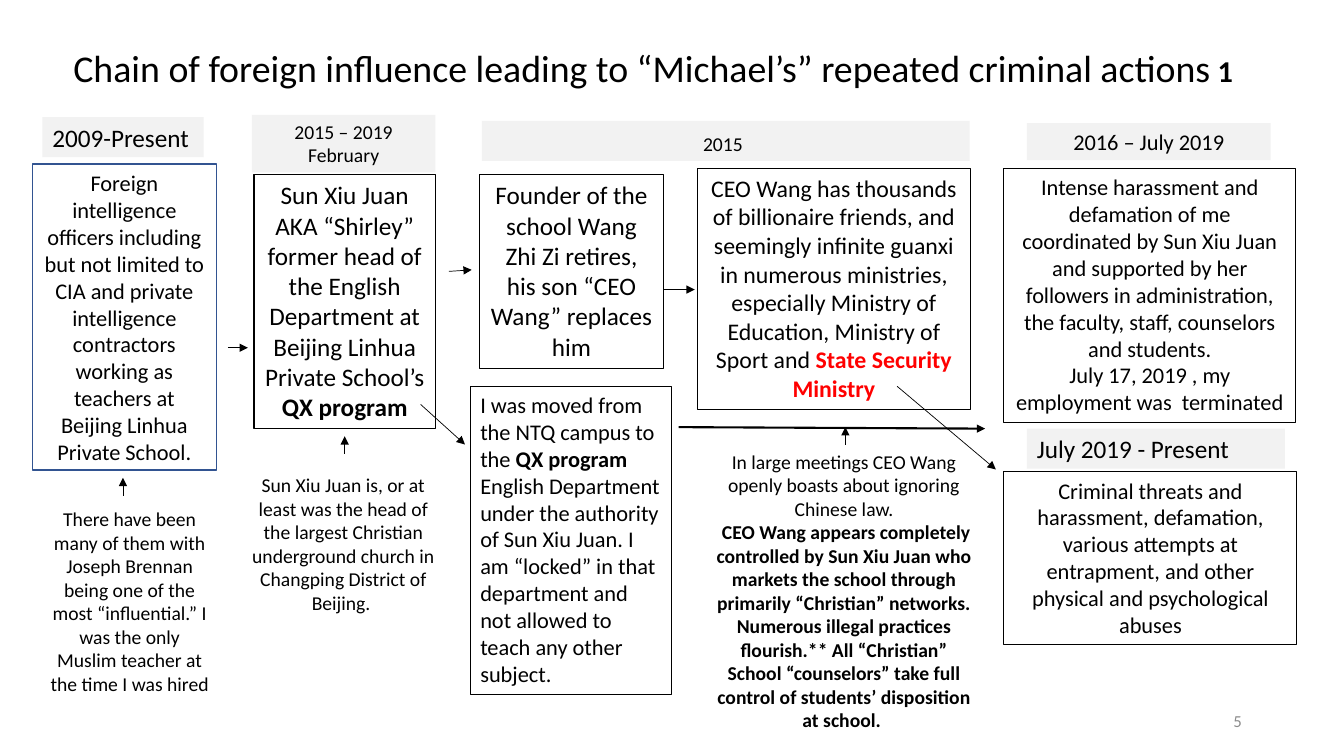
from dataclasses import dataclass

from lxml.etree import SubElement
from pptx import Presentation
from pptx.dml.color import RGBColor
from pptx.enum.shapes import MSO_CONNECTOR, MSO_SHAPE
from pptx.enum.text import MSO_ANCHOR, PP_ALIGN
from pptx.oxml.ns import qn
from pptx.util import Inches, Pt

WIDE, HIGH = Inches(13.33), Inches(7.5)
FONT = "Calibri"
BLACK, WHITE, GREY, RED = "000000", "FFFFFF", "F2F2F2", "FF0000"
BLUE, DIM = "325491", "8C8C8C"
LEFT, MID, RIGHT = PP_ALIGN.LEFT, PP_ALIGN.CENTER, PP_ALIGN.RIGHT
TOP, CORE = MSO_ANCHOR.TOP, MSO_ANCHOR.MIDDLE


@dataclass(frozen=True)
class Run:
    text: str
    bold: bool = False
    color: str = BLACK
    size: float = 0


@dataclass(frozen=True)
class Box:
    area: tuple[float, float, float, float]
    size: float
    paras: list[list[Run]]
    fill: str = ""
    edge: str = ""
    line: float = 0.75
    align: PP_ALIGN = MID
    anchor: MSO_ANCHOR = TOP
    pitch: float = 1


@dataclass(frozen=True)
class Arrow:
    start: tuple[float, float]
    end: tuple[float, float]
    line: float = 0.5


def paint(code: str) -> RGBColor:
    return RGBColor.from_string(code)


def across(share: float) -> int:
    return round(WIDE * share / 100)


def down(share: float) -> int:
    return round(HIGH * share / 100)


def add_box(slide, box: Box) -> None:
    x, y, w, h = box.area
    place = across(x), down(y), across(w), down(h)
    if box.fill or box.edge:
        shape = slide.shapes.add_shape(MSO_SHAPE.RECTANGLE, *place)
        shape.shadow.inherit = False
    else:
        shape = slide.shapes.add_textbox(*place)
    if box.fill:
        shape.fill.solid()
        shape.fill.fore_color.rgb = paint(box.fill)
    else:
        shape.fill.background()
    if box.edge:
        shape.line.color.rgb = paint(box.edge)
        shape.line.width = Pt(box.line)
    else:
        shape.line.fill.background()
    frame = shape.text_frame
    frame.word_wrap = True
    frame.vertical_anchor = box.anchor
    for i, runs in enumerate(box.paras):
        para = frame.add_paragraph() if i else frame.paragraphs[0]
        para.alignment = box.align
        para.line_spacing = box.pitch
        for item in runs:
            run = para.add_run()
            run.text = item.text
            run.font.name = FONT
            run.font.size = Pt(item.size or box.size)
            run.font.bold = item.bold
            run.font.color.rgb = paint(item.color)


def add_arrow(slide, arrow: Arrow) -> None:
    (x1, y1), (x2, y2) = arrow.start, arrow.end
    link = slide.shapes.add_connector(
        MSO_CONNECTOR.STRAIGHT, across(x1), down(y1), across(x2), down(y2))
    link.line.color.rgb = paint(BLACK)
    link.line.width = Pt(arrow.line)
    SubElement(link.line._get_or_add_ln(), qn("a:tailEnd"), type="triangle")
    SubElement(link._element.spPr, qn("a:effectLst"))


TITLE = Box((3.15, 3.7, 91.4, 11.2), 27, [[
    Run("Chain of foreign influence leading to “Michael’s” repeated criminal actions"),
    Run(" 1 ", True, size=21.6)]], anchor=CORE, pitch=0.9)

DATES = [
    Box((3.15, 15.5, 12, 5.3), 18, [[Run("2009-Present")]], GREY, align=LEFT),
    Box((18.75, 15.2, 13.65, 7.6), 14, [[Run("2015 – 2019 February")]], GREY),
    Box((35.85, 16, 36.3, 5.3), 14, [[Run("2015"), Run(" ", size=18)]], GREY),
    Box((76.4, 16.3, 18.15, 4.9), 16, [[Run("2016 – July 2019")]], GREY),
    Box((76.4, 56.7, 19.2, 5.3), 18, [[Run("July 2019 - Present")]], GREY, align=LEFT),
]

EVENTS = [
    Box((2.4, 21.7, 13.7, 40.5), 16, [[
        Run("Foreign intelligence officers including but not limited to CIA and "
            "private intelligence contractors working as teachers at Beijing "
            "Linhua Private School.")]], WHITE, BLUE, 1, anchor=CORE),
    Box((18.9, 23.1, 13.5, 33.6), 18, [[
        Run("Sun Xiu Juan AKA “Shirley” former head of the English Department at "
            "Beijing Linhua Private School’s "),
        Run("QX program", True)]], edge=BLACK),
    Box((35.7, 23.1, 13.65, 25.6), 18, [[
        Run("Founder of the school Wang Zhi Zi retires, his son “CEO Wang” "
            "replaces him")]], edge=BLACK),
    Box((51.9, 22.3, 20.3, 31.9), 17, [[
        Run("CEO Wang has thousands of billionaire friends, and seemingly infinite "
            "guanxi in numerous ministries, especially Ministry of Education, "
            "Ministry of Sport and "),
        Run("State Security Ministry", True, RED)]], edge=BLACK),
    Box((35, 51.1, 14.95, 40.8), 16, [[
        Run("I was moved from the NTQ campus to the "),
        Run("QX program ", True),
        Run("English Department under the authority of Sun Xiu Juan. I am “locked” "
            "in that department and not allowed to teach any other subject.")]],
        edge=BLACK, align=LEFT),
    Box((74.7, 22.3, 21.7, 33.6), 16, [
        [Run("Intense harassment and defamation of me coordinated by Sun Xiu Juan "
             "and supported by her followers in administration, the faculty, "
             "staff, counselors and students.")],
        [Run("July 17, 2019 , my employment was  terminated ")]], edge=BLACK),
    Box((74.7, 62.4, 21.8, 22.9), 16, [[
        Run("Criminal threats and harassment, defamation, various attempts at "
            "entrapment, and other physical and psychological abuses")]], edge=BLACK),
]

NOTES = [
    Box((2.8, 66.4, 13.7, 26.5), 14, [[
        Run("There have been many of them with Joseph Brennan being one of the "
            "most “influential.” I was the only Muslim teacher at the time I was "
            "hired")]]),
    Box((17.7, 61.9, 15.7, 20.1), 14, [[
        Run("Sun Xiu Juan is, or at least was the head of the largest Christian "
            "underground church in Changping District of Beijing. ")]]),
    Box((52.35, 58.8, 20.9, 39.1), 14, [
        [Run("In large meetings CEO Wang openly boasts about ignoring Chinese law.")],
        [Run(" CEO Wang appears completely controlled by Sun Xiu Juan who markets "
             "the school through primarily “Christian” networks. Numerous illegal "
             "practices flourish.** All “Christian” School “counselors” take full "
             "control of students’ disposition at school. ", True)]], edge=WHITE),
]

PAGE = Box((70.65, 92.7, 22.5, 5.3), 12, [[Run("5", color=DIM)]],
           align=RIGHT, anchor=CORE)

ARROWS = [
    Arrow((16.95, 46), (18.45, 46)),
    Arrow((33.4, 35.9), (35.1, 35.7)),
    Arrow((49.35, 38.3), (51.7, 38.3)),
    Arrow((9.15, 65.6), (9.15, 63.2)),
    Arrow((25.65, 60), (25.65, 57.7)),
    Arrow((62.9, 58.8), (62.9, 56.5)),
    Arrow((31.3, 53.5), (34.6, 58.8)),
    Arrow((50.5, 56.5), (73.3, 56.7), 1.5),
    Arrow((66.75, 51.1), (74.1, 62.1)),
]


def main() -> None:
    deck = Presentation()
    deck.slide_width, deck.slide_height = WIDE, HIGH
    slide = deck.slides.add_slide(deck.slide_layouts[6])
    for box in [TITLE, *DATES, *EVENTS, *NOTES, PAGE]:
        add_box(slide, box)
    for arrow in ARROWS:
        add_arrow(slide, arrow)
    deck.save("out.pptx")


if __name__ == "__main__":
    main()
